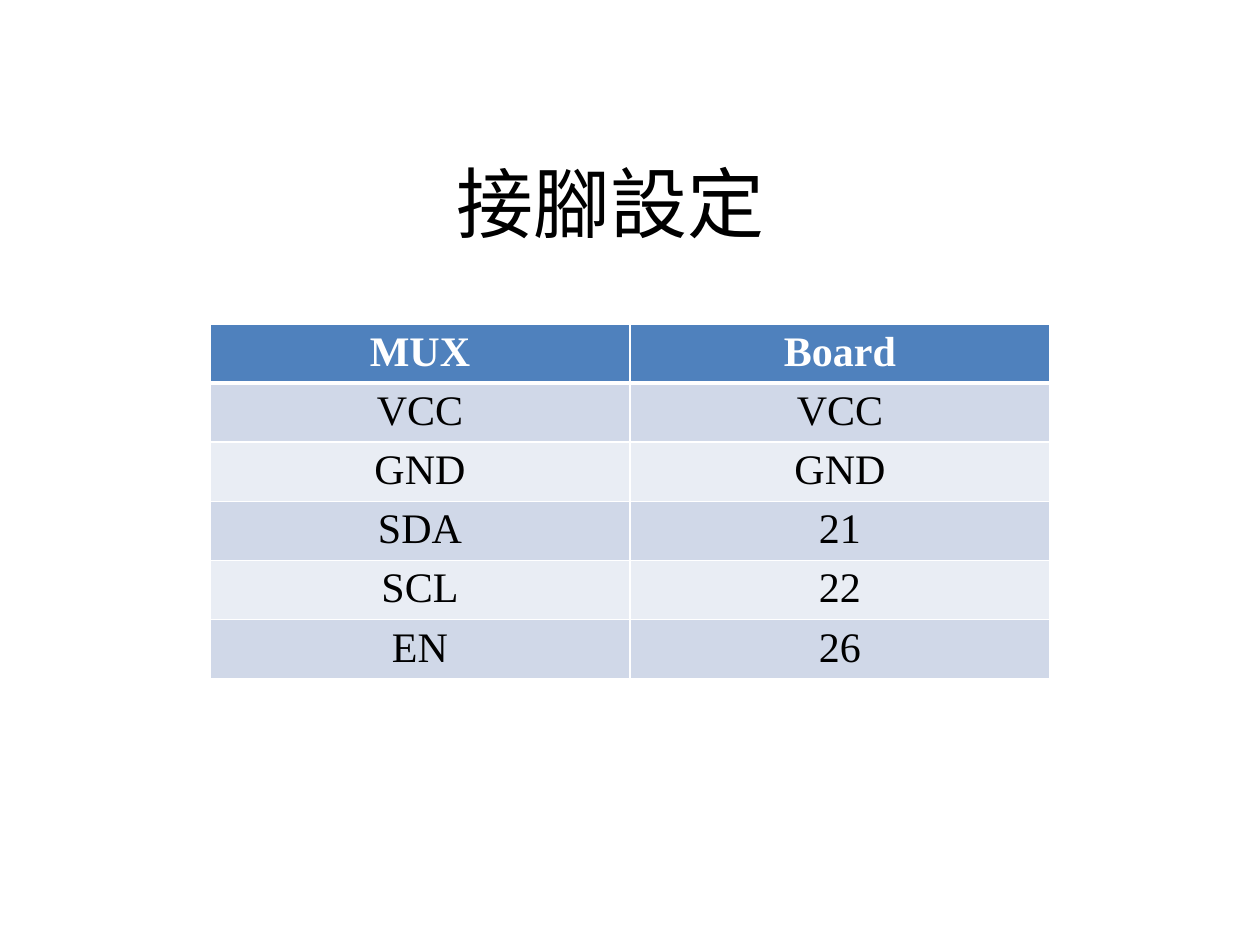
from lxml import etree
from pptx import Presentation
from pptx.dml.color import RGBColor
from pptx.enum.text import MSO_ANCHOR, PP_ALIGN
from pptx.oxml.ns import qn
from pptx.util import Inches, Pt

CENTER = PP_ALIGN.CENTER
MIDDLE = MSO_ANCHOR.MIDDLE
TITLE_ONLY = 5
WIDE, HIGH = 10, 7.5
FONT = "Times New Roman"
COLORS = {
    "ink": "000000",
    "paper": "FFFFFF",
    "head": "4F81BD",
    "odd": "D0D8E8",
    "even": "E9EDF4",
}
PINS = [
    ("MUX", "Board"),
    ("VCC", "VCC"),
    ("GND", "GND"),
    ("SDA", "21"),
    ("SCL", "22"),
    ("EN", "26"),
]


def color(name):
    return RGBColor.from_string(COLORS[name])


class Deck:
    """Holds the style and the current slide; lengths are in inches."""

    def __init__(self):
        self.prs = Presentation()
        self.prs.slide_width = Inches(WIDE)
        self.prs.slide_height = Inches(HIGH)
        self.slide = self.prs.slides.add_slide(self.prs.slide_layouts[TITLE_ONLY])

    def style(self, frame, size, tint, bold=False):
        para = frame.paragraphs[0]
        para.alignment = CENTER
        font = para.font
        font.name, font.size, font.bold = FONT, Pt(size), bold
        font.color.rgb = color(tint)

    def title(self, text, left, top, width, height):
        box = self.slide.shapes.title
        box.left, box.top = Inches(left), Inches(top)
        box.width, box.height = Inches(width), Inches(height)
        box.text_frame.text = text
        box.text_frame.vertical_anchor = MIDDLE
        self.style(box.text_frame, 44, "ink")

    def edges(self, cell, base):
        # Borders must come before the fill in the cell properties
        props = cell._tc.get_or_add_tcPr()
        widths = {"a:lnL": 1, "a:lnR": 1, "a:lnT": 1, "a:lnB": base}
        for spot, (tag, width) in enumerate(widths.items()):
            line = etree.Element(qn(tag), w=str(Pt(width)))
            fill = etree.SubElement(line, qn("a:solidFill"))
            etree.SubElement(fill, qn("a:srgbClr"), val=COLORS["paper"])
            props.insert(spot, line)

    def table(self, rows, left, top, width, step):
        shape = self.slide.shapes.add_table(
            len(rows), len(rows[0]), Inches(left), Inches(top),
            Inches(width), Inches(step * len(rows)))
        for r, row in enumerate(rows):
            head = r == 0
            fill = "head" if head else "odd" if r % 2 else "even"
            for c, text in enumerate(row):
                cell = shape.table.cell(r, c)
                cell.text = text
                cell.margin_top = cell.margin_bottom = Inches(0.04)
                cell.fill.solid()
                cell.fill.fore_color.rgb = color(fill)
                self.style(cell.text_frame, 24, "paper" if head else "ink", head)
                self.edges(cell, 3 if head else 1)


def main():
    deck = Deck()

    # Heading
    deck.title("接腳設定", 0.035 * WIDE, 0.13 * HIGH, 0.9 * WIDE, HIGH / 6)

    # Pin table, centred across two thirds of the slide
    deck.table(PINS, WIDE / 6, 2.57, WIDE * 2 / 3, 0.47)

    deck.prs.save("out.pptx")


if __name__ == "__main__":
    main()
